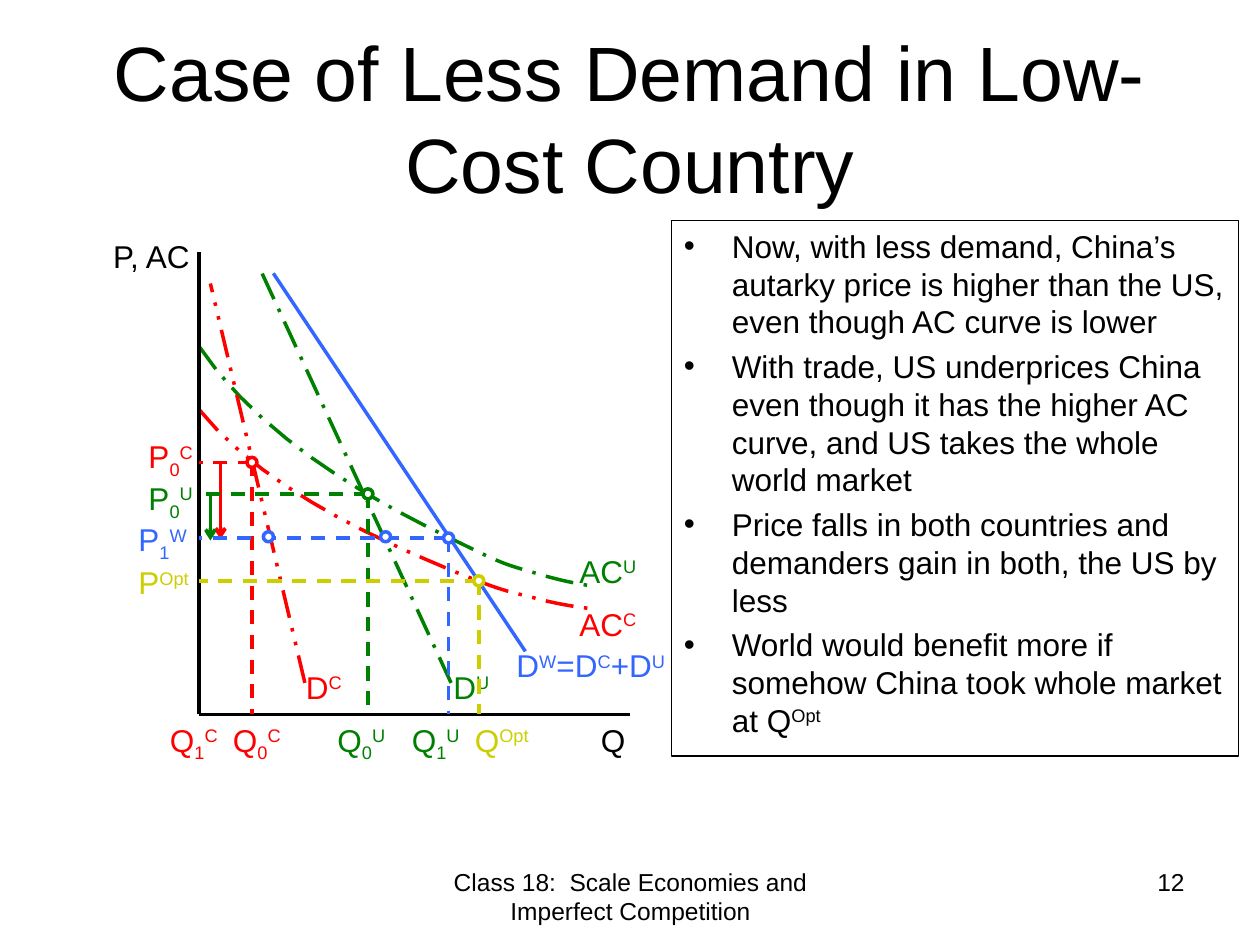
from lxml import etree
from pptx import Presentation
from pptx.dml.color import RGBColor
from pptx.enum.dml import MSO_LINE_DASH_STYLE as DASH
from pptx.enum.shapes import MSO_CONNECTOR, MSO_SHAPE
from pptx.enum.text import MSO_ANCHOR, MSO_AUTO_SIZE, PP_ALIGN
from pptx.oxml.ns import qn
from pptx.util import Inches, Pt

COLORS = {"black": "000000", "white": "FFFFFF", "green": "008000",
          "red": "FF0000", "blue": "3366FF", "yellow": "CDCE00"}
RGB = {name: RGBColor.from_string(value) for name, value in COLORS.items()}
BASELINES = {"_": "-25000", "^": "30000"}


def add_runs(p, text, color="black", size=18):
    """Add runs split at "|"; a leading _ lowers a run and ^ raises it."""
    for part in text.split("|"):
        r = p.add_run()
        r.text = part.lstrip("_^")
        r.font.name = "Arial"
        r.font.size = Pt(size)
        r.font.color.rgb = RGB[color]
        if part[0] in BASELINES:
            r._r.get_or_add_rPr().set("baseline", BASELINES[part[0]])


def style_line(shape, color, dash=None, width=2):
    shape.line.color.rgb = RGB[color]
    shape.line.width = Pt(width)
    if dash:
        shape.line.dash_style = dash


prs = Presentation()
prs.slide_width, prs.slide_height = Inches(10), Inches(7.5)
s = prs.slides.add_slide(prs.slide_layouts[5])

# Title
title = s.shapes.title
title.left, title.top = Inches(0.5), Inches(0.3)
title.width, title.height = Inches(9), Inches(1.25)
tf = title.text_frame
tf.word_wrap = True
tf.auto_size = MSO_AUTO_SIZE.NONE
tf.vertical_anchor = MSO_ANCHOR.MIDDLE
tf.paragraphs[0].alignment = PP_ALIGN.CENTER
add_runs(tf.paragraphs[0], "Case of Less Demand in Low-Cost Country", size=44)

# Bulleted explanation
box = s.shapes.add_textbox(Inches(5.33), Inches(1.75), Inches(4.5), Inches(4.25))
style_line(box, "black", width=0.75)
tf = box.text_frame
tf.word_wrap = True
points = [
    "Now, with less demand, China’s autarky price is higher than the US, "
    "even though AC curve is lower",
    "With trade, US underprices China even though it has the higher AC curve, "
    "and US takes the whole world market",
    "Price falls in both countries and demanders gain in both, the US by less",
    "World would benefit more if somehow China took whole market at Q|^Opt",
]
for i, point in enumerate(points):
    p = tf.paragraphs[0] if i == 0 else tf.add_paragraph()
    p.space_before = Pt(3.9)
    pPr = p._p.get_or_add_pPr()
    pPr.set("marL", str(Inches(0.38)))
    pPr.set("indent", str(-Inches(0.38)))
    etree.SubElement(pPr, qn("a:buFont")).set("typeface", "Arial")
    etree.SubElement(pPr, qn("a:buChar")).set("char", "•")
    add_runs(p, point)

# Diagram labels and footer: text, left, top, width, colour
axis_x, axis_y = 1.58, 5.67
labels = [
    ("P, AC", 0.8, 1.83, 1.12, "black"),
    ("Q", 4.67, axis_y, 0.58, "black"),
    ("Q|_1|^C", 1.25, axis_y, 0.67, "red"),
    ("Q|_0|^C", 1.75, axis_y, 0.67, "red"),
    ("Q|_0|^U", 2.58, axis_y, 0.67, "green"),
    ("Q|_1|^U", 3.17, axis_y, 0.67, "green"),
    ("Q|^Opt", 3.67, axis_y, 0.67, "yellow"),
    ("P|_0|^C", 1.08, 3.42, 0.58, "red"),
    ("P|_0|^U", 1.08, 3.75, 0.58, "green"),
    ("P|_1|^W", 1, 4.08, 0.67, "blue"),
    ("P|^Opt", 1, 4.42, 0.67, "yellow"),
    ("D|^C", 2.33, 5.25, 0.58, "red"),
    ("D|^U", 3.5, 5.25, 0.58, "green"),
    ("D|^W|=D|^C|+D|^U", 4, 5.08, 1.58, "blue"),
    ("AC|^U", 4.5, 4.33, 0.75, "green"),
    ("AC|^C", 4.5, 4.75, 0.75, "red"),
]
footers = [
    ("Class 18:  Scale Economies and Imperfect Competition", 3.42, 6.83, 3.17, "black"),
    ("12", 7.17, 6.83, 2.33, "black"),
]
alignments = [PP_ALIGN.LEFT] * len(labels) + [PP_ALIGN.CENTER, PP_ALIGN.RIGHT]
for (text, x, y, w, color), alignment in zip(labels + footers, alignments):
    is_label = alignment == PP_ALIGN.LEFT
    tb = s.shapes.add_textbox(Inches(x), Inches(y), Inches(w),
                              Inches(0.4 if is_label else 0.52))
    tb.text_frame.word_wrap = True
    p = tb.text_frame.paragraphs[0]
    p.alignment = alignment
    add_runs(p, text, color, 18 if is_label else 14)

# Average cost curves: start, then the control points of each Bezier segment
curves = [
    ("green", DASH.LONG_DASH_DOT, (1.58, 2.75),
     [[(2.14, 3.59), (3.25, 4.11), (3.59, 4.28)],
      [(3.94, 4.45), (3.97, 4.47), (4.22, 4.54)],
      [(4.47, 4.62), (4.69, 4.65), (4.69, 4.65)]]),
    ("red", DASH.DASH_DOT_DOT, (1.58, 3.25),
     [[(2.14, 3.95), (3.25, 4.38), (3.59, 4.53)],
      [(3.94, 4.67), (3.97, 4.68), (4.22, 4.74)],
      [(4.47, 4.81), (4.69, 4.83), (4.69, 4.83)]]),
]
STEPS = 12
for color, dash, start, segments in curves:
    builder = s.shapes.build_freeform(Inches(start[0]), Inches(start[1]))
    vertices = []
    for a, b, end in segments:
        for k in range(1, STEPS + 1):
            t = k / STEPS
            u = 1 - t
            vertices.append(tuple(
                Inches(u**3 * p0 + 3 * u * u * t * p1 + 3 * u * t * t * p2 + t**3 * p3)
                for p0, p1, p2, p3 in zip(start, a, b, end)))
        start = end
    builder.add_line_segments(vertices, close=False)
    curve = builder.convert_to_shape()
    curve.shadow.inherit = False
    curve.fill.background()
    style_line(curve, color, dash)

# Axes, demand curves, dashed guides and price-fall arrows
lines = [
    (axis_x, axis_y, 5, axis_y, "black", None, False),
    (axis_x, axis_y, axis_x, 2, "black", None, False),
    (3.58, 5.42, 2.08, 2.17, "green", DASH.LONG_DASH_DOT, False),
    (2.42, 5.42, 1.67, 2.25, "red", DASH.DASH_DOT_DOT, False),
    (4.17, 5.17, 2.17, 2.17, "blue", None, False),
    (1.75, 3.67, 1.75, 4.28, "red", None, True),
    (1.67, 3.92, 1.67, 4.29, "green", None, True),
]
guides = [(2.92, 3.92, "green"), (2, 3.67, "red"),
          (3.56, 4.27, "blue"), (3.8, 4.61, "yellow")]
for x, y, color in guides:
    lines.append((x, y, axis_x, y, color, DASH.DASH, False))
    lines.append((x, y, x, axis_y, color, DASH.DASH, False))
for x1, y1, x2, y2, color, dash, arrow in lines:
    line = s.shapes.add_connector(MSO_CONNECTOR.STRAIGHT, Inches(x1), Inches(y1),
                                  Inches(x2), Inches(y2))
    style_line(line, color, dash)
    spPr = line._element.spPr
    if arrow:
        etree.SubElement(spPr.find(qn("a:ln")), qn("a:tailEnd")).set("type", "arrow")
    etree.SubElement(spPr, qn("a:effectLst"))

# Equilibrium points
DOT = 0.08
dots = guides + [(3.06, 4.26, "blue"), (2.13, 4.26, "blue")]
for x, y, color in dots:
    dot = s.shapes.add_shape(MSO_SHAPE.OVAL, Inches(x - DOT / 2), Inches(y - DOT / 2),
                             Inches(DOT), Inches(DOT))
    dot.shadow.inherit = False
    dot.fill.solid()
    dot.fill.fore_color.rgb = RGB["white"]
    style_line(dot, color)

prs.save("out.pptx")
